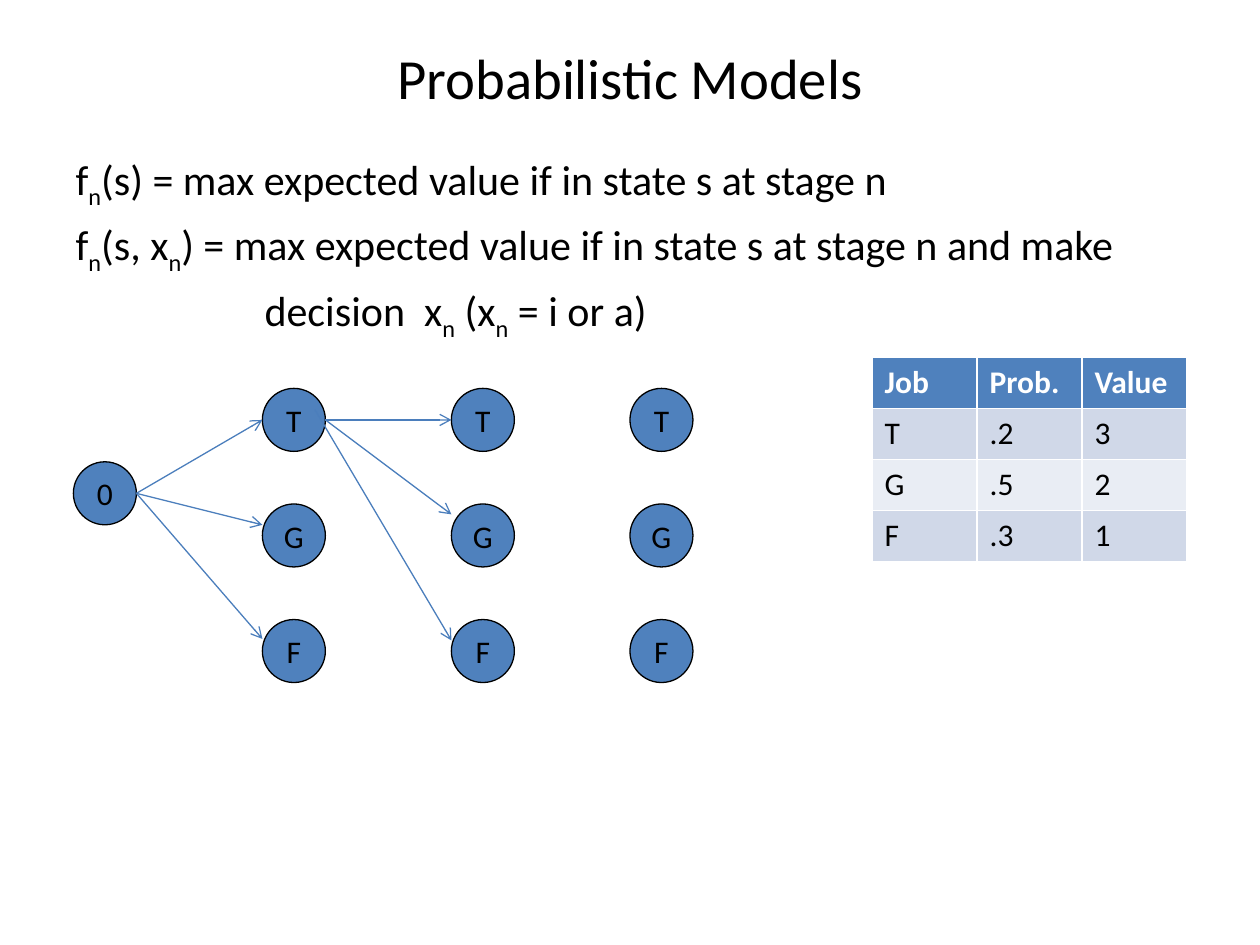
from lxml.etree import SubElement
from pptx import Presentation
from pptx.dml.color import RGBColor
from pptx.enum.shapes import MSO_CONNECTOR, MSO_SHAPE
from pptx.enum.text import MSO_ANCHOR, MSO_AUTO_SIZE, PP_ALIGN
from pptx.oxml.ns import qn
from pptx.util import Cm, Pt

BLACK = RGBColor(0x00, 0x00, 0x00)
WHITE = RGBColor(0xFF, 0xFF, 0xFF)
BLUE = RGBColor(0x4F, 0x81, 0xBD)
ARROW_BLUE = RGBColor(0x4B, 0x7E, 0xBC)
BANDS = [RGBColor(0xD0, 0xD8, 0xE8), RGBColor(0xE9, 0xED, 0xF4)]
FONT = "Calibri"

# Content: "_" marks that the next letter is a subscript
TITLE = "Probabilistic Models"
DEFINITIONS = [  # text, left margin, first-line indent (cm)
    ("f_n(s) = max expected value if in state s at stage n", 0.95, -0.95),
    ("f_n(s, x_n) = max expected value if in state s at stage n and make", 0.95, -0.95),
    ("decision  x_n (x_n = i or a)", 3.81, 0),
]
JOBS = [
    ("Job", "Prob.", "Value"),
    ("T", ".2", "3"),
    ("G", ".5", "2"),
    ("F", ".3", "1"),
]

# Network geometry (cm)
NODE = 1.27
START = (1.48, 9.31)
STAGES = [5.29, 9.1, 12.7]
TOP, ROW_STEP = 7.83, 2.33
STATES = ["T", "G", "F"]
START_EXIT = (START[0] + NODE, START[1] + NODE / 2)
T_EXIT = (STAGES[0] + NODE, TOP + NODE / 2)
ARROWS = [  # start point, index of the target stage, height of the arrowhead
    (START_EXIT, 0, 12.88),
    (START_EXIT, 0, T_EXIT[1]),
    (START_EXIT, 0, 10.58),
    (T_EXIT, 1, T_EXIT[1]),
    ((6.35, 8.26), 1, 12.91),
    (T_EXIT, 1, 10.37),
]


def style(span, size, color=BLACK, bold=False):
    span.font.name = FONT
    span.font.size = Pt(size)
    span.font.color.rgb = color
    span.font.bold = bold


def place(shape, left, top, width, height):
    shape.left, shape.top = Cm(left), Cm(top)
    shape.width, shape.height = Cm(width), Cm(height)


def add_span(para, text, subscript=False):
    span = para.add_run()
    span.text = text
    style(span, 24)
    if subscript:
        span.font._element.set("baseline", "-25000")


def add_definition(para, text, margin, indent):
    properties = para._p.get_or_add_pPr()
    properties.set("marL", str(Cm(margin)))
    properties.set("indent", str(Cm(indent)))
    SubElement(properties, qn("a:buNone"))
    first, *rest = text.split("_")
    add_span(para, first)
    for part in rest:
        add_span(para, part[0], subscript=True)
        add_span(para, part[1:])


def add_node(page, label, left, top):
    node = page.shapes.add_shape(MSO_SHAPE.OVAL, Cm(left), Cm(top), Cm(NODE), Cm(NODE))
    node.shadow.inherit = False
    node.fill.solid()
    node.fill.fore_color.rgb = BLUE
    node.line.color.rgb = BLACK
    node.line.width = Pt(0.75)
    frame = node.text_frame
    frame.text = label
    frame.word_wrap = False
    frame.vertical_anchor = MSO_ANCHOR.MIDDLE
    para = frame.paragraphs[0]
    para.alignment = PP_ALIGN.CENTER
    style(para.runs[0], 18)


def add_arrow(page, start, end):
    points = [Cm(value) for value in (*start, *end)]
    arrow = page.shapes.add_connector(MSO_CONNECTOR.STRAIGHT, *points)
    arrow.line.color.rgb = ARROW_BLUE
    arrow.line.width = Pt(0.75)
    SubElement(arrow.line._get_or_add_ln(), qn("a:tailEnd"), type="arrow")
    SubElement(arrow._element.spPr, qn("a:effectLst"))


def add_job_table(page):
    table = page.shapes.add_table(
        len(JOBS), len(JOBS[0]), Cm(17.58), Cm(7.2), Cm(6.35), Cm(4.12)).table
    for r, row in enumerate(JOBS):
        for c, text in enumerate(row):
            cell = table.cell(r, c)
            cell.text = text
            cell.fill.solid()
            cell.fill.fore_color.rgb = BANDS[(r - 1) % 2] if r else BLUE
            span = cell.text_frame.paragraphs[0].runs[0]
            style(span, 18, BLACK if r else WHITE, bold=r == 0)


def main():
    deck = Presentation()
    deck.slide_width, deck.slide_height = Cm(25.4), Cm(19.05)
    page = deck.slides.add_slide(deck.slide_layouts[1])

    # Title and definitions
    title, body = page.placeholders
    place(title, 1.27, 0.76, 22.86, 1.57)
    title.text_frame.text = TITLE
    title.text_frame.auto_size = MSO_AUTO_SIZE.NONE
    style(title.text_frame.paragraphs[0].runs[0], 32.4)
    place(body, 1.27, 2.96, 22.86, 13.84)
    frame = body.text_frame
    frame.auto_size = MSO_AUTO_SIZE.NONE
    for i, definition in enumerate(DEFINITIONS):
        para = frame.add_paragraph() if i else frame.paragraphs[0]
        add_definition(para, *definition)

    # Job values
    add_job_table(page)

    # State network
    add_node(page, "0", *START)
    for left in STAGES:
        for row, state in enumerate(STATES):
            add_node(page, state, left, TOP + row * ROW_STEP)
    for start, stage, height in ARROWS:
        add_arrow(page, start, (STAGES[stage], height))

    deck.save("out.pptx")


if __name__ == "__main__":
    main()
